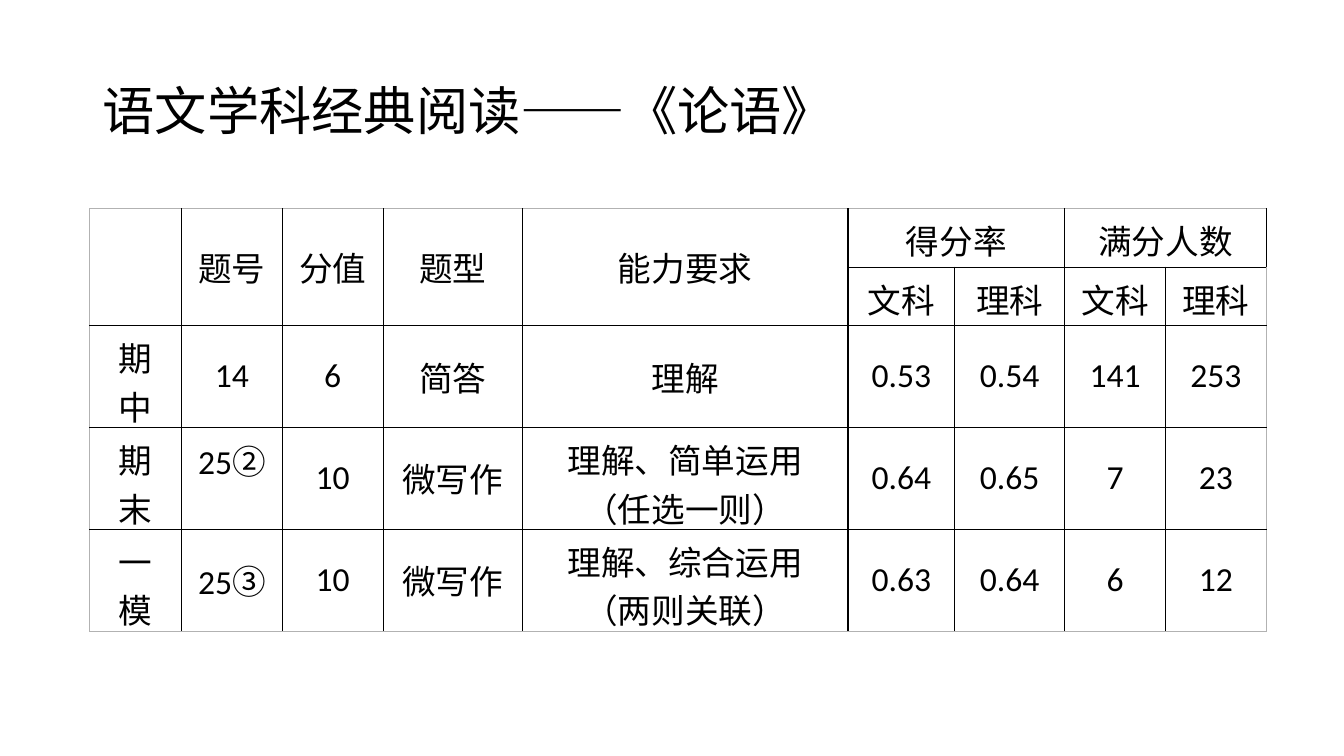
from dataclasses import dataclass

from lxml import etree
from pptx import Presentation
from pptx import util as u
from pptx.dml import color
from pptx.enum import text
from pptx.oxml import ns


@dataclass(frozen=True)
class Theme:
    ink: str = "000000"
    edge: str = "B2B2B2"
    latin: str = "Calibri"
    han: str = "Noto Sans CJK SC"
    title: float = 37.3
    body: float = 24
    line: float = 1
    thin: float = 0.5


THEME = Theme()
WIDTHS = [0.91, 1, 1, 1.38, 3.23, 1.06, 1.09, 1, 1]
HEIGHTS = [0.58, 0.58, 1.01, 1.01, 1.01]
MERGES = [((0, col), (1, col)) for col in range(5)] + [((0, 5), (0, 6)), ((0, 7), (0, 8))]
ROWS = [
    ["", "题号", "分值", "题型", "能力要求", "得分率", "", "满分人数", ""],
    ["", "", "", "", "", "文科", "理科", "文科", "理科"],
    ["期中", "14", "6", "简答", "理解", "0.53", "0.54", "141", "253"],
    ["期末", "25②", "10", "微写作", "理解、简单运用\n（任选一则）", "0.64", "0.65", "7", "23"],
    ["一模", "25③", "10", "微写作", "理解、综合运用\n（两则关联）", "0.63", "0.64", "6", "12"],
]
CELL = {
    "vertical_anchor": text.MSO_ANCHOR.MIDDLE,
    "margin_left": u.Inches(0.13),
    "margin_right": u.Inches(0.13),
    "margin_top": u.Inches(0.07),
    "margin_bottom": u.Inches(0.07),
}
RAISED = {"margin_bottom": u.Inches(0.43)}
FRAME = {"word_wrap": True, "vertical_anchor": text.MSO_ANCHOR.MIDDLE}


def apply(target, form):
    for name, value in form.items():
        setattr(target, name, value)


def add_run(para, words, size, face):
    run = para.add_run()
    run.text = words
    apply(run.font, {"size": u.Pt(size), "name": face})
    run.font.color.rgb = color.RGBColor.from_string(THEME.ink)
    east = etree.SubElement(run.font._element, ns.qn("a:ea"))
    east.set("typeface", THEME.han)


def add_title(slide, words):
    box = slide.shapes.add_textbox(*map(u.Inches, (0.92, 0.4, 11.5, 1.45)))
    apply(box.text_frame, FRAME)
    para = box.text_frame.paragraphs[0]
    para.line_spacing = 0.9
    add_run(para, words, THEME.title, THEME.han)


def fill_text(cell, words):
    for index, line in enumerate(words.split("\n")):
        frame = cell.text_frame
        para = frame.add_paragraph() if index else frame.paragraphs[0]
        para.alignment = text.PP_ALIGN.CENTER
        body = line.rstrip("②③")
        mark = line[len(body):]
        if body:
            add_run(para, body, THEME.body, THEME.latin)
        if mark:
            add_run(para, mark, THEME.body, THEME.han)


def set_lines(cell, outer):
    props = cell._tc.get_or_add_tcPr()
    for index, side in enumerate(("lnL", "lnR", "lnT", "lnB")):
        width, tone = (THEME.thin, THEME.edge) if side in outer else (THEME.line, THEME.ink)
        line = etree.Element(ns.qn(f"a:{side}"), w=str(int(u.Pt(width))))
        fill = etree.SubElement(line, ns.qn("a:solidFill"))
        etree.SubElement(fill, ns.qn("a:srgbClr"), val=tone)
        props.insert(index, line)


def add_grid(slide):
    place = map(u.Inches, (0.89, 2.07, sum(WIDTHS), sum(HEIGHTS)))
    grid = slide.shapes.add_table(len(ROWS), len(WIDTHS), *place).table
    apply(grid, {"first_row": False, "horz_banding": False})
    for col, width in zip(grid.columns, WIDTHS):
        col.width = u.Inches(width)
    for row, height in zip(grid.rows, HEIGHTS):
        row.height = u.Inches(height)
    for start, end in MERGES:
        grid.cell(*start).merge(grid.cell(*end))
    for r, row in enumerate(ROWS):
        for c, words in enumerate(row):
            cell = grid.cell(r, c)
            apply(cell, CELL)
            cell.fill.background()
            if words:
                fill_text(cell, words)
            edges = {"lnL": c == 0, "lnR": c == len(row) - 1,
                     "lnT": r == 0, "lnB": r == len(ROWS) - 1}
            set_lines(cell, [side for side, outer in edges.items() if outer])
    apply(grid.cell(3, 1), RAISED)


def main():
    deck = Presentation()
    apply(deck, {"slide_width": u.Inches(13.33), "slide_height": u.Inches(7.5)})
    slide = deck.slides.add_slide(deck.slide_layouts[6])
    add_title(slide, "语文学科经典阅读——《论语》")
    add_grid(slide)
    deck.save("out.pptx")


if __name__ == "__main__":
    main()
